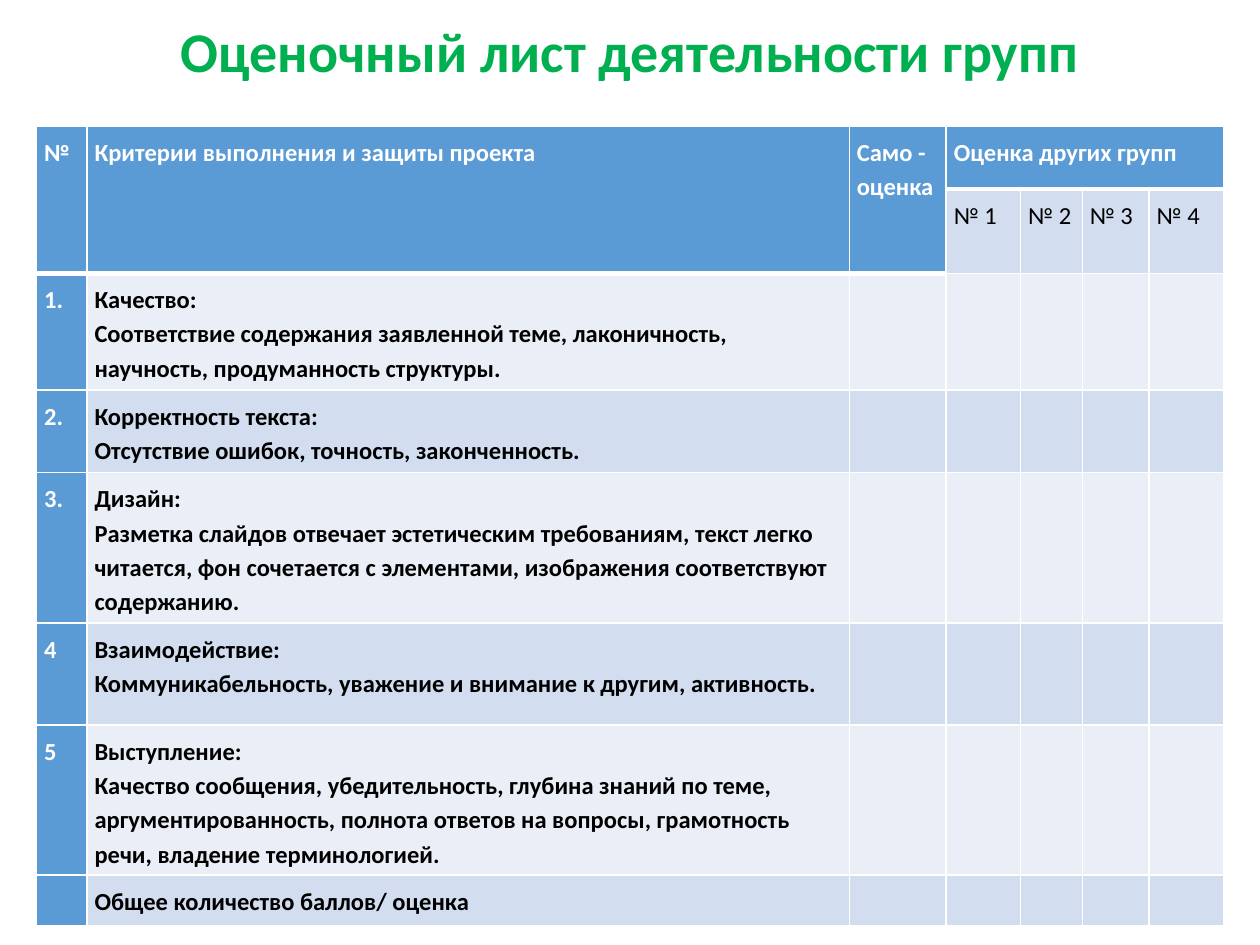
import pptx
import pptx.util
import pptx.dml.color
import pptx.enum.text
import pptx.oxml
import pptx.oxml.ns
import lxml.etree

Inches = pptx.util.Inches
Pt = pptx.util.Pt
qn = pptx.oxml.ns.qn
theme = {
    "font": "Calibri", "title": 32, "body": 14,
    "green": "00B050", "blue": "5B9BD5", "white": "FFFFFF", "black": "000000",
    "bands": ["EAEFF7", "D2DEEF"],
}


def style(par, size, color, bold, space):
    par.line_spacing = space
    for run in par.runs:
        run.font.name = theme["font"]
        run.font.size = Pt(size)
        run.font.bold = bold
        run.font.color.rgb = pptx.dml.color.RGBColor.from_string(theme[color])


def border(cell, side, width):
    props = cell._tc.get_or_add_tcPr()
    line = lxml.etree.SubElement(props, qn("a:ln" + side), w=str(Pt(width)))
    fill = lxml.etree.SubElement(line, qn("a:solidFill"))
    lxml.etree.SubElement(fill, qn("a:srgbClr"), val=theme["white"])


deck = pptx.Presentation()
deck.slide_width, deck.slide_height = Inches(10), Inches(7.5)
slide = deck.slides.add_slide(deck.slide_layouts[6])

title = slide.shapes.add_textbox(Inches(0.69), Inches(0.4), Inches(8.62), Inches(0.6))
frame = title.text_frame
frame.word_wrap = True
frame.vertical_anchor = pptx.enum.text.MSO_ANCHOR.MIDDLE
frame.text = "Оценочный лист деятельности групп\v"
head = frame.paragraphs[0]
head.alignment = pptx.enum.text.PP_ALIGN.CENTER
style(head, theme["title"], "green", True, 0.9)
lxml.etree.SubElement(head._p, qn("a:endParaRPr"), sz=str(theme["title"] * 100))

widths = [0.4, 6.05, 0.77, 0.59, 0.49, 0.53, 0.59]
heights = [0.5, 0.67, 0.81, 0.58, 1.03, 0.81, 1.03, 0.36]
rows = [
    ["№", "Критерии выполнения и защиты проекта", "Само - оценка", "Оценка других групп"],
    ["", "", "", "№ 1", "№ 2", "№ 3", "№ 4"],
    ["1.", "Качество:\nСоответствие содержания заявленной теме, лаконичность, "
     "научность, продуманность структуры."],
    ["2.", "Корректность текста:\nОтсутствие ошибок, точность, законченность."],
    ["3.", "Дизайн:\nРазметка слайдов отвечает эстетическим требованиям, текст легко "
     "читается, фон сочетается с элементами, изображения соответствуют содержанию."],
    ["4", "Взаимодействие:\nКоммуникабельность, уважение и внимание к другим, активность."],
    ["5", "Выступление:\nКачество сообщения, убедительность, глубина знаний по теме, "
     "аргументированность, полнота ответов на вопросы, грамотность речи, "
     "владение терминологией."],
    ["", "Общее количество баллов/ оценка"],
]
table = slide.shapes.add_table(len(rows), len(widths), Inches(0.29), Inches(1),
                               Inches(9.43), Inches(6.2)).table
for col, width in zip(table.columns, widths):
    col.width = Inches(width)
for row, height in zip(table.rows, heights):
    row.height = Inches(height)

for r, texts in enumerate(rows):
    for c in range(len(widths)):
        cell = table.cell(r, c)
        top = r == 0 or (r == 1 and c < 3)
        dark = top or c == 0
        edge = 1 if c > 2 else 2
        for side in "LRTB":
            thick = (side == "B" and r == edge - 1) or (side == "T" and r == edge)
            border(cell, side, 3 if thick else 1)
        cell.fill.solid()
        tone = theme["blue"] if dark else theme["bands"][r % 2]
        cell.fill.fore_color.rgb = pptx.dml.color.RGBColor.from_string(tone)
        if c < len(texts) and texts[c]:
            cell.margin_left = cell.margin_right = Inches(0.06)
            cell.margin_top = cell.margin_bottom = Inches(0.06)
            cell.text_frame.text = texts[c]
            for par in cell.text_frame.paragraphs:
                style(par, theme["body"], "white" if dark else "black", r != 1, 1.15)

for c in range(3):
    table.cell(0, c).merge(table.cell(1, c))
table.cell(0, 3).merge(table.cell(0, 6))

deck.save("out.pptx")
